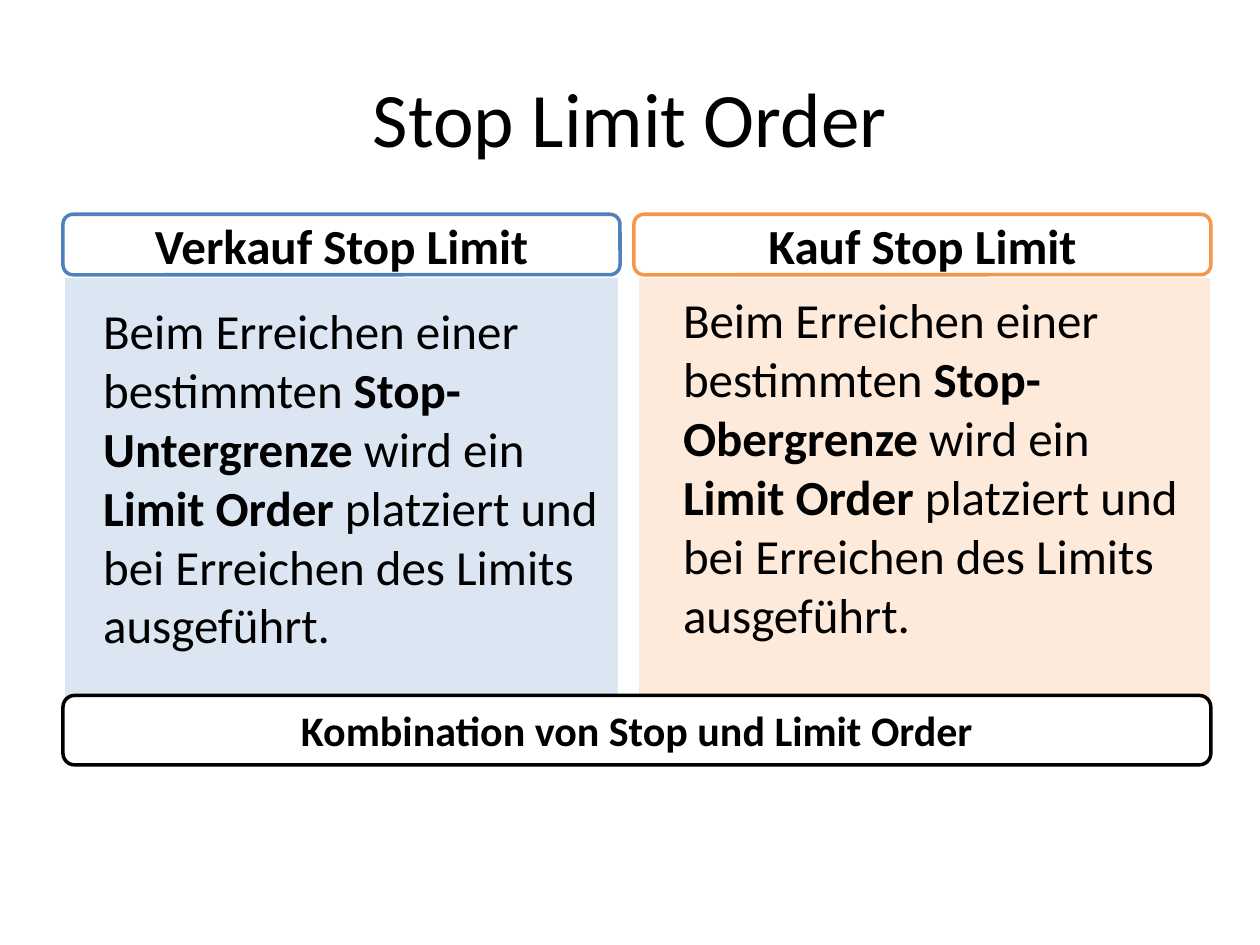
from pptx import Presentation
from pptx.dml.color import RGBColor
from pptx.enum.shapes import MSO_SHAPE
from pptx.enum.text import MSO_ANCHOR, PP_ALIGN
from pptx.util import Cm, Pt

COLORS = {
    "text": "000000",
    "white": "FFFFFF",
    "sell": "4F81BD",
    "sell_panel": "DCE6F2",
    "buy": "F79646",
    "buy_panel": "FDEADA",
}
FONT = "Calibri"


def rgb(name):
    """Return the named colour."""
    return RGBColor.from_string(COLORS[name])


def add_run(p, text, size, bold=False):
    """Append one formatted run to a paragraph."""
    r = p.add_run()
    r.text = text
    r.font.name = FONT
    r.font.size = Pt(size)
    r.font.bold = bold
    r.font.color.rgb = rgb("text")


def add_box(s, kind, box, fill, line):
    """Add a filled, outlined shape without shadow."""
    sp = s.shapes.add_shape(kind, *map(Cm, box))
    sp.shadow.inherit = False
    sp.fill.solid()
    sp.fill.fore_color.rgb = rgb(fill)
    sp.line.color.rgb = rgb(line)
    sp.line.width = Pt(2)
    return sp


def add_label(s, box, line, text, size):
    """Add a rounded box with a centred bold label."""
    sp = add_box(s, MSO_SHAPE.ROUNDED_RECTANGLE, box, "white", line)
    tf = sp.text_frame
    tf.word_wrap = True
    tf.vertical_anchor = MSO_ANCHOR.MIDDLE
    p = tf.paragraphs[0]
    p.alignment = PP_ALIGN.CENTER
    add_run(p, text, size, True)


def add_description(s, box, limit):
    """Add the indented explanation for one order type."""
    tf = s.shapes.add_textbox(*map(Cm, box)).text_frame
    tf.word_wrap = True
    p = tf.paragraphs[0]
    pPr = p._p.get_or_add_pPr()
    pPr.set("marL", str(Cm(0.74)))
    pPr.set("indent", "0")
    runs = [
        ("Beim Erreichen einer bestimmten ", False),
        (limit, True),
        (" wird ein ", False),
        ("Limit Order", True),
        (" platziert und bei Erreichen des Limits ausgeführt.", False),
    ]
    for text, bold in runs:
        add_run(p, text, 28, bold)


def add_title(s, text):
    """Place and format the title placeholder."""
    sp = s.shapes.title
    sp.left, sp.top, sp.width, sp.height = map(Cm, (1.27, 0.76, 22.86, 3.18))
    tf = sp.text_frame
    tf.vertical_anchor = MSO_ANCHOR.MIDDLE
    p = tf.paragraphs[0]
    p.alignment = PP_ALIGN.CENTER
    add_run(p, text, 44)


def main():
    """Build the slide and save it."""
    prs = Presentation()
    prs.slide_width, prs.slide_height = Cm(25.4), Cm(19.05)
    s = prs.slides.add_slide(prs.slide_layouts[5])
    add_title(s, "Stop Limit Order")
    columns = [
        ("sell", "Verkauf Stop Limit", "Stop-Untergrenze",
         (1.27, 11.23), (1.27, 11.23), (1.09, 5.94, 11.4, 13.1)),
        ("buy", "Kauf Stop Limit", "Stop-Obergrenze",
         (12.78, 11.63), (12.85, 11.58), (12.78, 5.72, 11.35, 12.8)),
    ]
    for key, heading, limit, (x, w), (panel_x, panel_w), text_box in columns:
        add_box(s, MSO_SHAPE.RECTANGLE, (panel_x, 5.56, panel_w, 8.76),
                f"{key}_panel", "white")
        add_description(s, text_box, limit)
        add_label(s, (x, 4.32, w, 1.22), key, heading, 28)
    add_label(s, (1.27, 14.02, 23.14, 1.4), "text",
              "Kombination von Stop und Limit Order", 24)
    prs.save("out.pptx")


if __name__ == "__main__":
    main()
